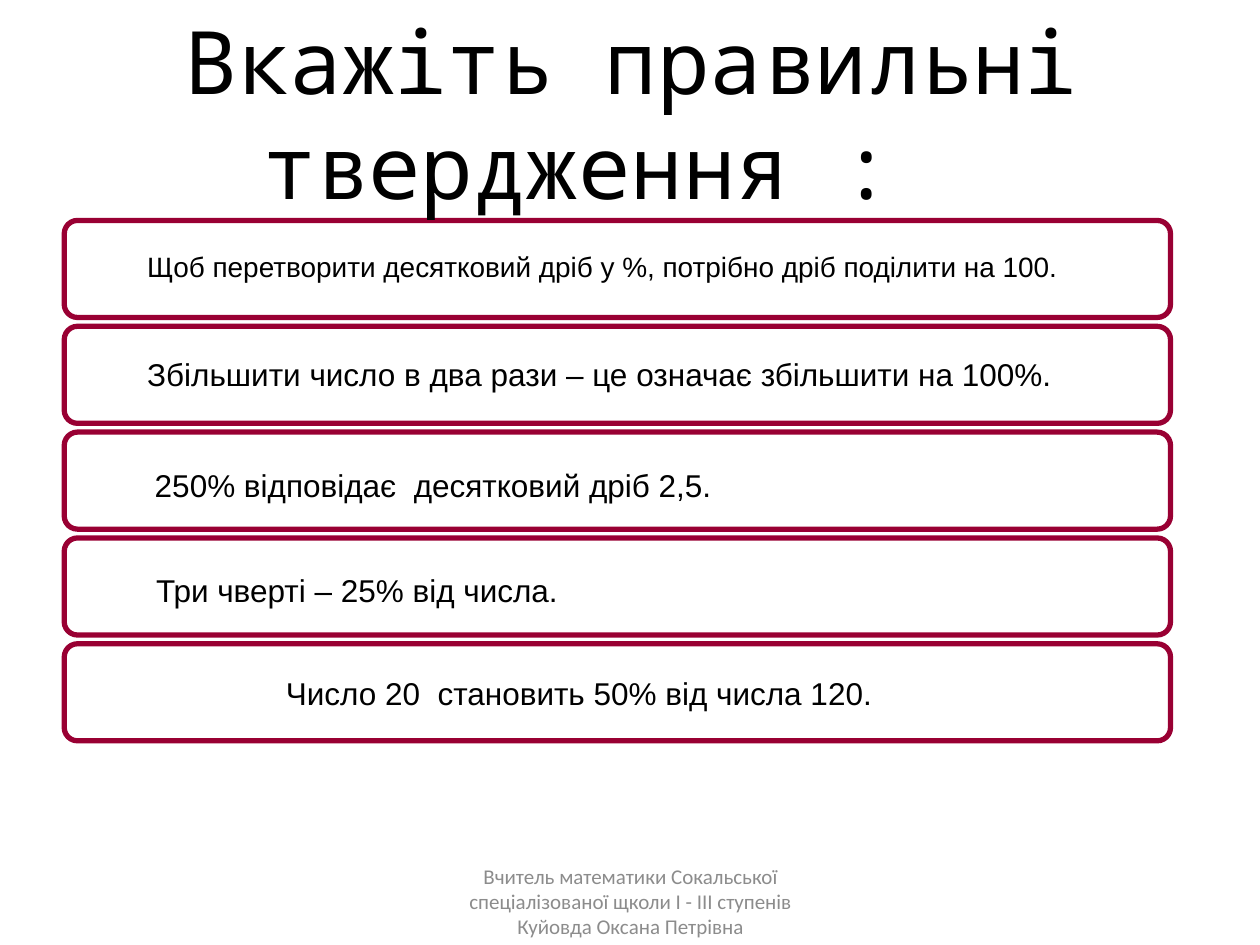
from dataclasses import dataclass

from pptx import Presentation
from pptx.dml.color import RGBColor
from pptx.enum.shapes import MSO_SHAPE
from pptx.enum.text import MSO_ANCHOR, PP_ALIGN
from pptx.util import Inches, Pt


@dataclass(frozen=True)
class Theme:
    """Colours, fonts and sizes of the slide."""

    ink: RGBColor = RGBColor(0x00, 0x00, 0x00)
    muted: RGBColor = RGBColor(0x8C, 0x8C, 0x8C)
    frame: RGBColor = RGBColor(0x99, 0x00, 0x33)
    paper: RGBColor = RGBColor(0xFF, 0xFF, 0xFF)
    title_font: str = "Noto Sans Mono"
    body_font: str = "Arial"
    footer_font: str = "Calibri"
    title_size: int = 50
    body_size: int = 18
    small_size: int = 16
    footer_size: int = 12
    frame_width: int = 3


@dataclass(frozen=True)
class Box:
    """A rectangle in inches."""

    left: float
    top: float
    width: float
    height: float

    def lengths(self):
        """Return the four sides as slide lengths."""
        return [Inches(side) for side in (self.left, self.top, self.width, self.height)]


THEME = Theme()
ROW_PITCH = 0.84
ROW_HEIGHT = 0.77
TITLE_LINES = ["Вкажіть правильні", "твердження :"]
TITLE_RIGHT_INDENT = 0.84
FOOTER = "Вчитель математики Сокальської спеціалізованої щколи І - ІІІ ступенів Куйовда Оксана Петрівна"
STATEMENTS = [
    ("Щоб перетворити десятковий дріб у %, потрібно дріб поділити на 100.", 0.56, 0.18, THEME.small_size),
    ("Збільшити число в два рази – це означає збільшити на 100%.", 0.56, 0.18, THEME.body_size),
    ("250% відповідає  десятковий дріб 2,5.", 0.62, 0.22, THEME.body_size),
    ("Три чверті – 25% від числа.", 0.63, 0.21, THEME.body_size),
    ("Число 20  становить 50% від числа 120.", 1.66, 0.19, THEME.body_size),
]


def add_text(slide, box, lines, font_name, size, color, align=PP_ALIGN.LEFT, anchor=MSO_ANCHOR.TOP):
    """Add a wrapped text box and return its text frame."""
    text_frame = slide.shapes.add_textbox(*box.lengths()).text_frame
    text_frame.word_wrap = True
    text_frame.vertical_anchor = anchor
    text_frame.text = "\n".join(lines)
    for paragraph in text_frame.paragraphs:
        paragraph.alignment = align
        for run in paragraph.runs:
            run.font.name = font_name
            run.font.size = Pt(size)
            run.font.color.rgb = color
    return text_frame


def add_title(slide, box):
    """Place the two centred title lines, the second set further left."""
    text_frame = add_text(slide, box, TITLE_LINES, THEME.title_font, THEME.title_size,
                          THEME.ink, PP_ALIGN.CENTER, MSO_ANCHOR.MIDDLE)
    properties = text_frame.paragraphs[-1]._p.get_or_add_pPr()
    properties.set("marR", str(Inches(TITLE_RIGHT_INDENT)))


def add_frames(slide, rows):
    """Place the group of rounded frames."""
    group = slide.shapes.add_group_shape()
    for row in rows:
        frame = group.shapes.add_shape(MSO_SHAPE.ROUNDED_RECTANGLE, *row.lengths())
        frame.adjustments[0] = 0.137
        frame.shadow.inherit = False
        frame.fill.background()
        frame.line.color.rgb = THEME.frame
        frame.line.width = Pt(THEME.frame_width)


def add_statements(slide, box):
    """Place one framed statement in each row of the box."""
    rows = [Box(box.left, box.top + index * ROW_PITCH, box.width, ROW_HEIGHT)
            for index in range(len(STATEMENTS))]
    add_frames(slide, rows)
    for row, (statement, indent, drop, size) in zip(rows, STATEMENTS):
        text_box = Box(row.left + indent, row.top + drop, row.width - indent, 0.4)
        add_text(slide, text_box, [statement], THEME.body_font, size, THEME.ink)


def add_footer(slide, box):
    """Place the centred teacher line."""
    add_text(slide, box, [FOOTER], THEME.footer_font, THEME.footer_size,
             THEME.muted, PP_ALIGN.CENTER, MSO_ANCHOR.MIDDLE)


def main():
    """Build and save the slide."""
    presentation = Presentation()
    presentation.slide_width = Inches(10)
    presentation.slide_height = Inches(7.5)
    slide = presentation.slides.add_slide(presentation.slide_layouts[6])
    slide.background.fill.solid()
    slide.background.fill.fore_color.rgb = THEME.paper
    add_footer(slide, Box(3.42, 6.95, 3.17, 0.4))
    add_statements(slide, Box(0.51, 1.75, 8.78, 4.13))
    add_title(slide, Box(0.51, 0.26, 9, 1.25))
    presentation.save("out.pptx")


if __name__ == "__main__":
    main()
